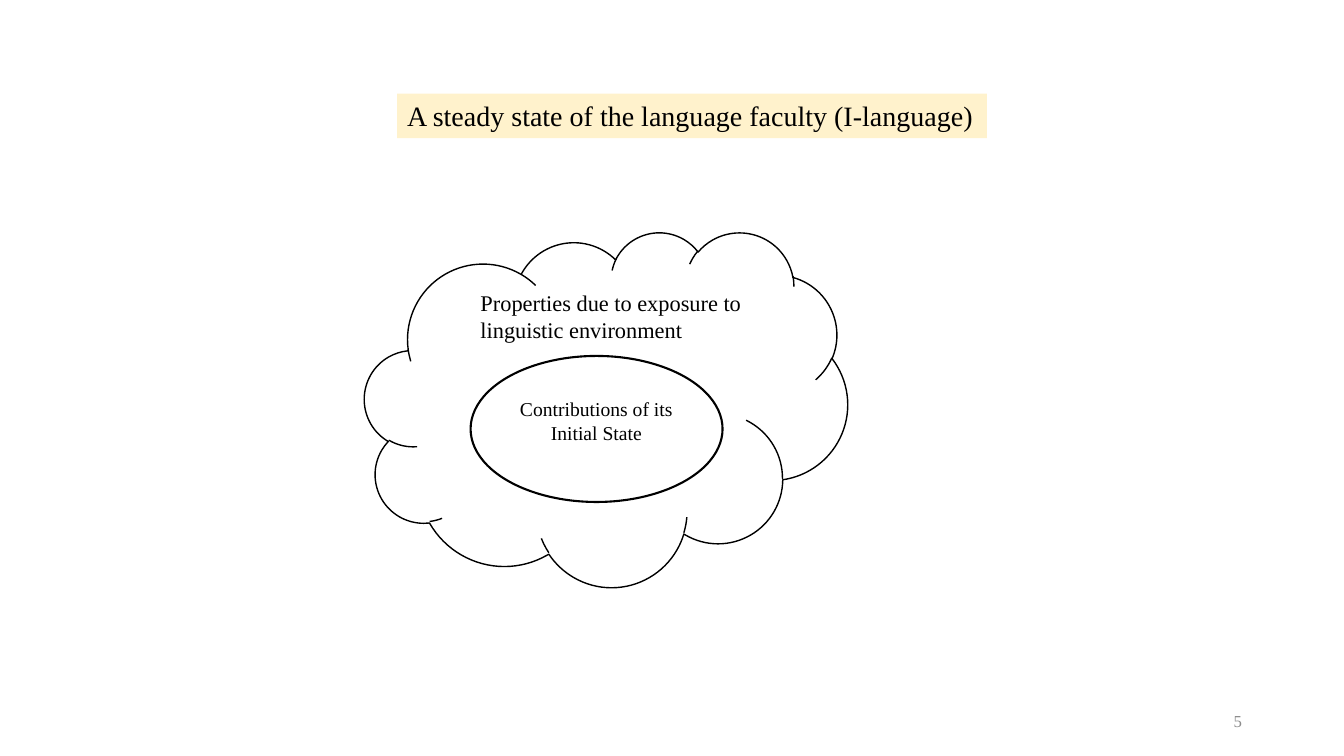
"""Build a slide showing the language faculty as a cloud around its initial state."""
from dataclasses import dataclass

from pptx import Presentation
from pptx import util as u
from pptx.dml.color import RGBColor
from pptx.enum import shapes, text


@dataclass(frozen=True)
class Theme:
    """Colours, font and type sizes of the slide."""
    font: str = "Times New Roman"
    ink: str = "000000"
    muted: str = "8C8C8C"
    highlight: str = "FFF2CC"
    title: int = 20
    body: int = 16
    label: int = 14
    footer: int = 12


class SlideBuilder:
    """Draw styled elements on the current slide."""

    def __init__(self, slide, theme):
        """Keep the slide and its theme."""
        self.slide = slide
        self.theme = theme

    def outline(self, kind, box, width):
        """Add an unfilled shape with an ink outline."""
        shape = self.slide.shapes.add_shape(kind, *map(u.Cm, box))
        shape.shadow.inherit = False
        shape.fill.background()
        shape.line.color.rgb = RGBColor.from_string(self.theme.ink)
        shape.line.width = u.Pt(width)

    def label(self, words, box, size, color=None, fill=None,
              align=text.PP_ALIGN.LEFT, **frame_format):
        """Add a text box with one paragraph."""
        shape = self.slide.shapes.add_textbox(*map(u.Cm, box))
        if fill:
            shape.fill.solid()
            shape.fill.fore_color.rgb = RGBColor.from_string(fill)
        frame = shape.text_frame
        for name, value in {"word_wrap": True, **frame_format}.items():
            setattr(frame, name, value)
        paragraph = frame.paragraphs[0]
        paragraph.alignment = align
        run = paragraph.add_run()
        run.text = words
        for name, value in {"name": self.theme.font, "size": u.Pt(size)}.items():
            setattr(run.font, name, value)
        run.font.color.rgb = RGBColor.from_string(color or self.theme.ink)


def main():
    """Build and save the presentation."""
    presentation = Presentation()
    presentation.slide_width = u.Cm(33.87)
    presentation.slide_height = u.Cm(19.05)
    slide = presentation.slides.add_slide(presentation.slide_layouts[6])
    theme = Theme()
    builder = SlideBuilder(slide, theme)
    grow = text.MSO_AUTO_SIZE.SHAPE_TO_FIT_TEXT

    builder.label("5", (23.93, 17.65, 7.62, 1.02), theme.footer, theme.muted,
                  align=text.PP_ALIGN.RIGHT, vertical_anchor=text.MSO_ANCHOR.MIDDLE)
    builder.outline(shapes.MSO_SHAPE.OVAL, (11.86, 8.97, 6.35, 3.68), 1.5)
    builder.label("Contributions of its Initial State", (12.73, 9.88, 4.6, 1.45),
                  theme.label, align=text.PP_ALIGN.CENTER, auto_size=grow)
    builder.label("Properties due to exposure to linguistic environment",
                  (11.86, 7.16, 7.26, 1.63), theme.body, auto_size=grow)
    builder.outline(shapes.MSO_SHAPE.CLOUD, (9.19, 5.84, 12.17, 8.94), 1)
    builder.label("A steady state of the language faculty (I-language)",
                  (10.01, 2.36, 14.86, 1.12), theme.title, fill=theme.highlight,
                  word_wrap=False, auto_size=grow)
    presentation.save("out.pptx")


if __name__ == "__main__":
    main()
